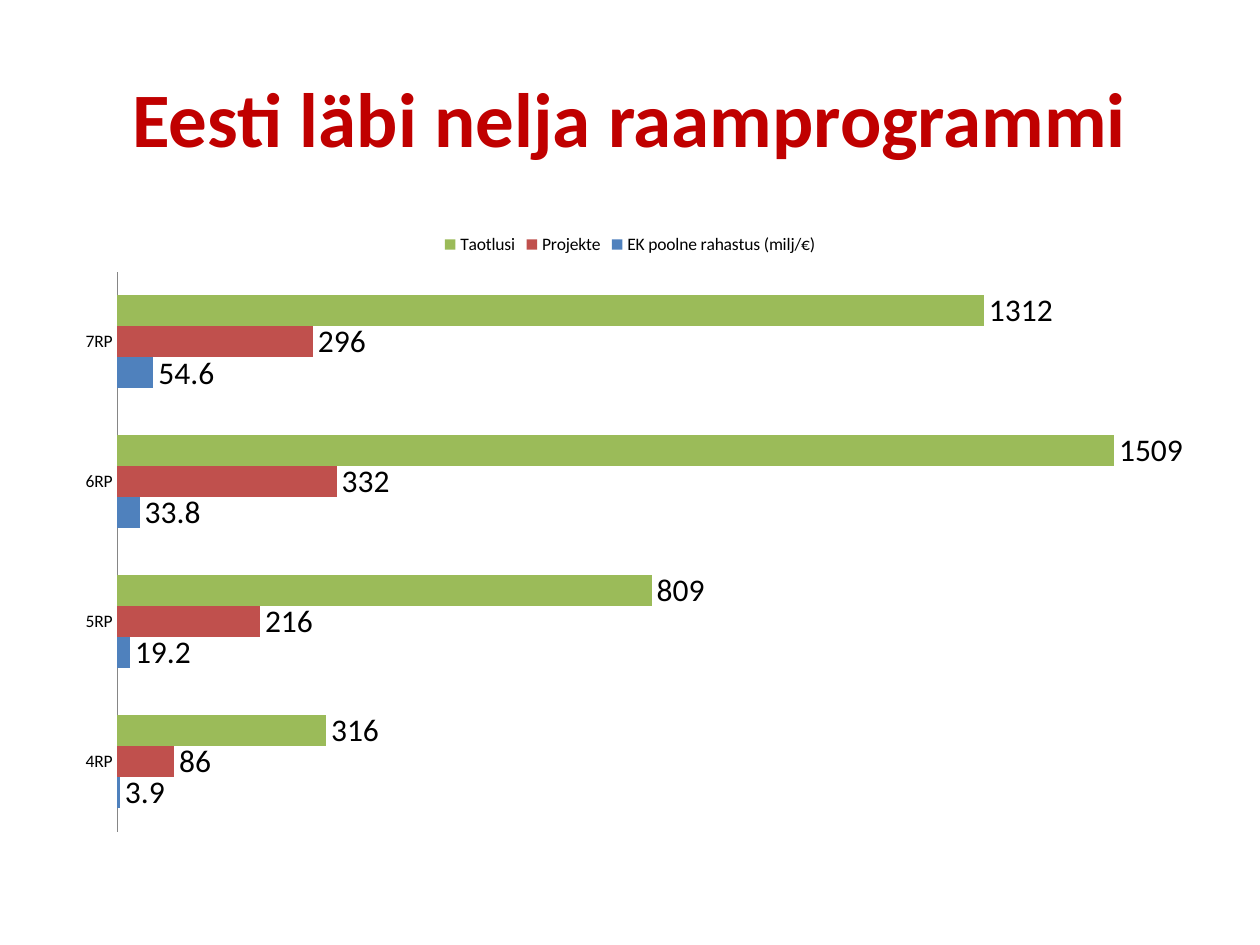
from pptx import Presentation
from pptx.chart.data import CategoryChartData
from pptx.dml.color import RGBColor
from pptx.enum.chart import (XL_CHART_TYPE, XL_LABEL_POSITION,
                             XL_LEGEND_POSITION, XL_TICK_MARK)
from pptx.enum.text import MSO_ANCHOR, PP_ALIGN
from pptx.util import Inches, Pt

COLORS = {"title": "C00000", "text": "000000", "axis": "868686",
          "funding": "4F81BD", "projects": "C0504D", "applications": "9BBB59"}

PROGRAMMES = ["4RP", "5RP", "6RP", "7RP"]
SERIES = [
    ("EK poolne rahastus (milj/€)", "funding", (3.9, 19.2, 33.8, 54.6)),
    ("Projekte", "projects", (86, 216, 332, 296)),
    ("Taotlusi", "applications", (316, 809, 1509, 1312)),
]


class SlideBuilder:
    font = "Calibri"

    def __init__(self, slide):
        self.s = slide

    def style(self, font, size, color, bold=False):
        font.name = self.font
        font.size = Pt(size)
        font.bold = bold
        font.color.rgb = RGBColor.from_string(COLORS[color])

    def title(self, text, x, y, w, h):
        sp = self.s.shapes.title
        sp.left, sp.top, sp.width, sp.height = map(Inches, (x, y, w, h))
        tf = sp.text_frame
        tf.text = text
        tf.vertical_anchor = MSO_ANCHOR.MIDDLE
        p = tf.paragraphs[0]
        p.alignment = PP_ALIGN.CENTER
        self.style(p.runs[0].font, 44, "title", bold=True)

    def bar_chart(self, categories, series, x, y, w, h):
        data = CategoryChartData()
        data.categories = categories
        for name, _, values in series:
            data.add_series(name, values)
        chart = self.s.shapes.add_chart(
            XL_CHART_TYPE.BAR_CLUSTERED,
            *map(Inches, (x, y, w, h)), data).chart
        self.style(chart.font, 10, "text")
        chart.has_title = False

        # Legend
        chart.has_legend = True
        chart.legend.position = XL_LEGEND_POSITION.TOP
        chart.legend.include_in_layout = False

        # Axes
        axis = chart.category_axis
        axis.major_tick_mark = axis.minor_tick_mark = XL_TICK_MARK.NONE
        axis.format.line.color.rgb = RGBColor.from_string(COLORS["axis"])
        axis.format.line.width = Pt(0.75)
        chart.value_axis.has_major_gridlines = False
        chart.value_axis.visible = False

        # Bars and value labels
        plot = chart.plots[0]
        plot.gap_width = 150
        plot.vary_by_categories = False
        for bars, (_, color, _) in zip(plot.series, series):
            bars.format.fill.solid()
            bars.format.fill.fore_color.rgb = RGBColor.from_string(COLORS[color])
            labels = bars.data_labels
            labels.show_value = True
            labels.position = XL_LABEL_POSITION.OUTSIDE_END
            self.style(labels.font, 18, "text")


def main():
    prs = Presentation()
    prs.slide_width, prs.slide_height = Inches(10), Inches(7.5)
    s = prs.slides.add_slide(prs.slide_layouts[5])
    builder = SlideBuilder(s)
    builder.title("Eesti läbi nelja raamprogrammi", 0.5, 0.3, 9, 1.25)
    builder.bar_chart(PROGRAMMES, SERIES, 0.5, 1.75, 9, 4.95)
    prs.save("out.pptx")


if __name__ == "__main__":
    main()
